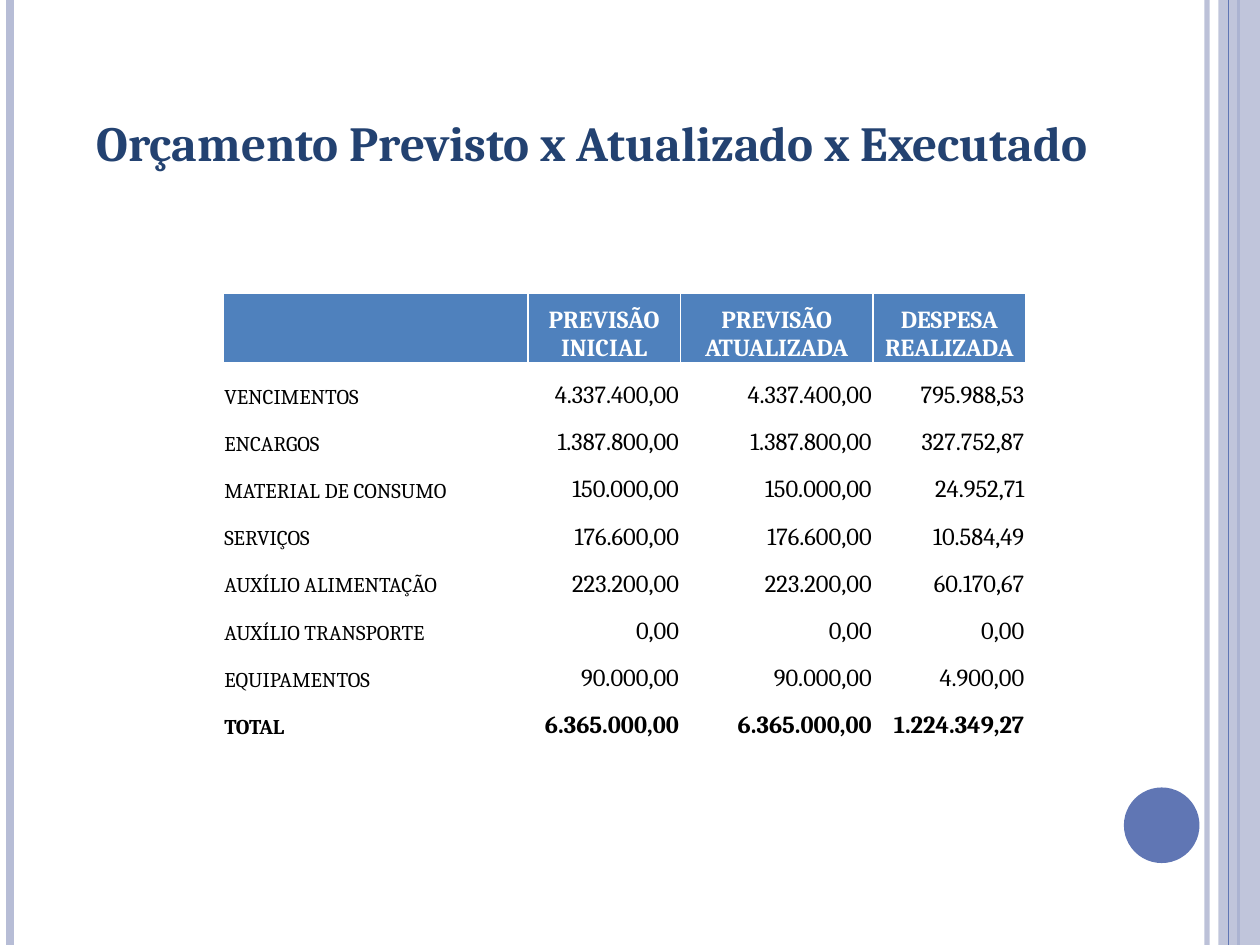
from pptx import Presentation
from pptx import util as u
from pptx.dml.color import RGBColor
from pptx.enum import shapes, text
from pptx.oxml.ns import qn
from lxml import etree

FONT = "Cambria"
W, H = 10, 7.5
LILAC, INDIGO, NAVY = "B7BDD6", "6076B4", "234271"
BLUE, WHITE, BLACK = "4F81BD", "FFFFFF", "000000"

TITLE = "Orçamento Previsto x Atualizado x Executado"
HEADER = ["", "PREVISÃO INICIAL", "PREVISÃO ATUALIZADA", "DESPESA REALIZADA"]
BUDGET = [
    ("VENCIMENTOS", "4.337.400,00", "4.337.400,00", "795.988,53"),
    ("ENCARGOS", "1.387.800,00", "1.387.800,00", "327.752,87"),
    ("MATERIAL DE CONSUMO", "150.000,00", "150.000,00", "24.952,71"),
    ("SERVIÇOS", "176.600,00", "176.600,00", "10.584,49"),
    ("AUXÍLIO ALIMENTAÇÃO", "223.200,00", "223.200,00", "60.170,67"),
    ("AUXÍLIO TRANSPORTE", "0,00", "0,00", "0,00"),
    ("EQUIPAMENTOS", "90.000,00", "90.000,00", "4.900,00"),
    ("TOTAL", "6.365.000,00", "6.365.000,00", "1.224.349,27"),
]
COLS = [2.42, 1.21, 1.53, 1.21]
HEAD_H, ROW_H = 0.55, 0.374

# Vertical rules: x, colour, width in points, opacity in percent
BACK_RULES = [(9.58, LILAC, 3, 93), (0.08, LILAC, 4.5, 100), (9.83, INDIGO, 1.5, 100)]
FRONT_RULES = [(9.75, INDIGO, 0.75, 100)]


def rgb(value):
    return RGBColor.from_string(value)


def set_alpha(sp, percent):
    for clr in sp._element.spPr.iter(qn("a:srgbClr")):
        etree.SubElement(clr, qn("a:alpha"), val=str(percent * 1000))


def add_rules(slide, rules):
    for x, color, width, opacity in rules:
        rule = slide.shapes.add_connector(
            shapes.MSO_CONNECTOR.STRAIGHT, u.Inches(x), 0, u.Inches(x), u.Inches(H))
        rule.line.color.rgb = rgb(color)
        rule.line.width = u.Pt(width)
        if opacity < 100:
            set_alpha(rule, opacity)
        etree.SubElement(rule._element.spPr, qn("a:effectLst"))


def add_solid(slide, kind, box, color):
    sp = slide.shapes.add_shape(kind, *map(u.Inches, box))
    sp.shadow.inherit = False
    sp.fill.solid()
    sp.fill.fore_color.rgb = rgb(color)
    sp.line.fill.background()
    return sp


def add_run(p, words, size, color, bold):
    r = p.add_run()
    r.text = words
    r.font.name = FONT
    r.font.size = u.Pt(size)
    r.font.bold = bold
    r.font.color.rgb = rgb(color)


def add_borders(cell, color, width):
    tc_pr = cell._tc.get_or_add_tcPr()
    for i, side in enumerate(("lnL", "lnR", "lnT", "lnB")):
        ln = etree.Element(qn(f"a:{side}"), w=str(u.Pt(width)))
        fill = etree.SubElement(ln, qn("a:solidFill"))
        etree.SubElement(fill, qn("a:srgbClr"), val=color)
        tc_pr.insert(i, ln)


def fill_cell(cell, words, row, col):
    is_head, is_total = row == 0, row == len(BUDGET)
    cell.fill.solid()
    cell.fill.fore_color.rgb = rgb(BLUE if is_head else WHITE)
    add_borders(cell, WHITE, 1)
    cell.vertical_anchor = text.MSO_ANCHOR.BOTTOM
    cell.margin_left = cell.margin_right = cell.margin_top = u.Inches(0.01)
    cell.margin_bottom = 0
    if not words:
        return
    p = cell.text_frame.paragraphs[0]
    if is_head:
        p.alignment = text.PP_ALIGN.CENTER
    else:
        p.alignment = text.PP_ALIGN.RIGHT if col else text.PP_ALIGN.LEFT
    add_run(p, words, 14 if is_head or col else 12,
            WHITE if is_head else BLACK, is_head or is_total)


def main():
    prs = Presentation()
    prs.slide_width, prs.slide_height = u.Inches(W), u.Inches(H)
    slide = prs.slides.add_slide(prs.slide_layouts[6])

    # Side decoration
    add_rules(slide, BACK_RULES)
    band = add_solid(slide, shapes.MSO_SHAPE.RECTANGLE, (9.67, 0, W - 9.67, H), LILAC)
    set_alpha(band, 87)
    add_rules(slide, FRONT_RULES)
    add_solid(slide, shapes.MSO_SHAPE.OVAL, (8.92, 6.25, 0.6, 0.6), INDIGO)

    # Title
    box = slide.shapes.add_textbox(*map(u.Inches, (0.67, 0.84, 8.77, 0.57)))
    tf = box.text_frame
    tf.word_wrap = True
    add_run(tf.paragraphs[0], TITLE, 28, NAVY, True)

    # Budget table
    rows = [HEADER] + BUDGET
    heights = [HEAD_H] + [ROW_H] * len(BUDGET)
    frame = slide.shapes.add_table(
        len(rows), len(COLS), u.Inches(1.77), u.Inches(2.33),
        u.Inches(sum(COLS)), u.Inches(sum(heights)))
    table = frame.table
    for column, width in zip(table.columns, COLS):
        column.width = u.Inches(width)
    for i, (row, height) in enumerate(zip(rows, heights)):
        table.rows[i].height = u.Inches(height)
        for j, words in enumerate(row):
            fill_cell(table.cell(i, j), words, i, j)

    prs.save("out.pptx")


if __name__ == "__main__":
    main()
